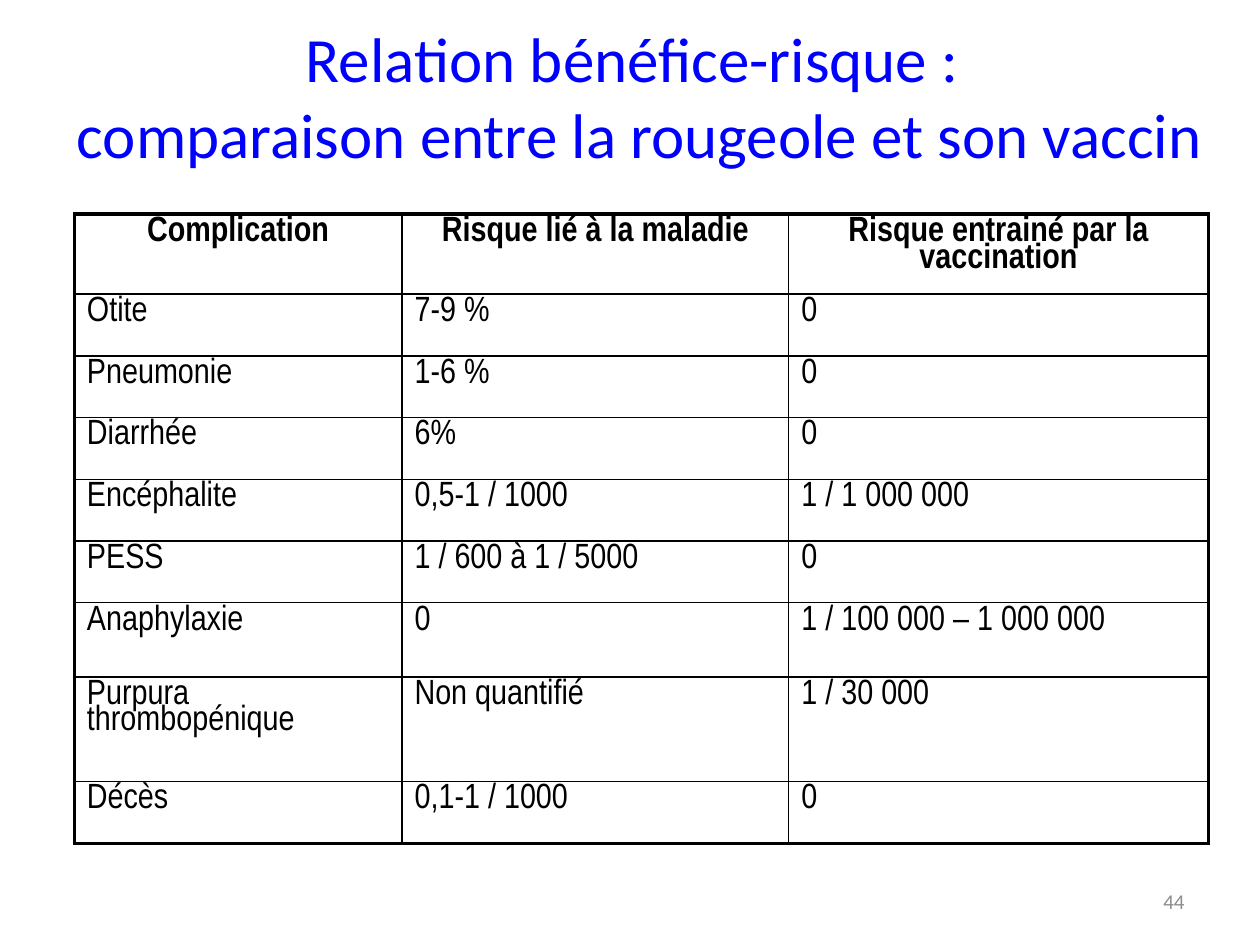
from dataclasses import dataclass

from lxml.etree import SubElement
from pptx import Presentation
from pptx.dml.color import RGBColor
from pptx.enum.text import MSO_ANCHOR, PP_ALIGN as Align
from pptx.oxml.ns import qn
from pptx.util import Inches, Pt


@dataclass(frozen=True)
class Theme:
    title_color: str = "0000FF"
    text_color: str = "000000"
    number_color: str = "8C8C8C"
    title_font: str = "Calibri"
    table_font: str = "Arial Narrow"
    title_size: int = 36
    table_size: int = 20
    number_size: int = 12
    outer_line: float = 2.25
    inner_line: float = 1


theme = Theme()


def write_text(frame, text, align, color, **font_values):
    frame.word_wrap = True
    paragraph = frame.paragraphs[0]
    paragraph.text = text
    paragraph.alignment = align
    for run in paragraph.runs:
        run.font.color.rgb = RGBColor.from_string(color)
        for name, value in font_values.items():
            setattr(run.font, name, value)
    return paragraph


def add_border(cell, side, width):
    line = SubElement(cell._tc.get_or_add_tcPr(), qn(f"a:ln{side}"), w=str(Pt(width)))
    fill = SubElement(line, qn("a:solidFill"))
    SubElement(fill, qn("a:srgbClr"), val=theme.text_color)


presentation = Presentation()
presentation.slide_width = Inches(10)
presentation.slide_height = Inches(7.5)
slide = presentation.slides.add_slide(presentation.slide_layouts[6])

# Title and slide number
text_boxes = [
    ((0.5, 0.13, 9.15, 1.25),
     "Relation bénéfice-risque : \vcomparaison entre la rougeole et son vaccin",
     Align.CENTER, theme.title_color, theme.title_size),
    ((7.17, 6.95, 2.33, 0.4), "44", Align.RIGHT, theme.number_color, theme.number_size),
]
for box, text, align, color, size in text_boxes:
    frame = slide.shapes.add_textbox(*map(Inches, box)).text_frame
    frame.vertical_anchor = MSO_ANCHOR.MIDDLE
    write_text(frame, text, align, color, name=theme.title_font, size=Pt(size))

# Table content
rows = [
    ("Complication", "Risque lié à la maladie", "Risque entrainé par la vaccination"),
    ("Otite", "7-9 %", "0"),
    ("Pneumonie", "1-6 %", "0"),
    ("Diarrhée", "6%", "0"),
    ("Encéphalite", "0,5-1 / 1000", "1 / 1 000 000"),
    ("PESS", "1 / 600 à 1 / 5000", "0"),
    ("Anaphylaxie", "0", "1 / 100 000 – 1 000 000"),
    ("Purpura thrombopénique", "Non quantifié", "1 / 30 000"),
    ("Décès", "0,1-1 / 1000", "0"),
]
column_widths = [2.6, 3.07, 3.33]
row_heights = [0.62] + [0.49] * 5 + [0.59, 0.83, 0.49]

# Table grid
table = slide.shapes.add_table(
    len(rows), len(column_widths), Inches(0.59), Inches(1.7),
    Inches(sum(column_widths)), Inches(sum(row_heights))).table
table.first_row = table.horz_banding = False
for column, width in zip(table.columns, column_widths):
    column.width = Inches(width)
for row, height in zip(table.rows, row_heights):
    row.height = Inches(height)

# Table cells: thick outer frame, thin inner rules
last_row, last_column = len(rows) - 1, len(column_widths) - 1
for row_index, row in enumerate(rows):
    is_header = row_index == 0
    for column_index, text in enumerate(row):
        cell = table.cell(row_index, column_index)
        paragraph = write_text(
            cell.text_frame, text, Align.CENTER if is_header else Align.LEFT,
            theme.text_color, name=theme.table_font, size=Pt(theme.table_size),
            bold=is_header)
        paragraph.line_spacing = 0.8
        on_edge = {"L": column_index == 0, "R": column_index == last_column,
                   "T": is_header, "B": row_index == last_row}
        for side, outer in on_edge.items():
            add_border(cell, side, theme.outer_line if outer else theme.inner_line)
        cell.fill.background()

presentation.save("out.pptx")
